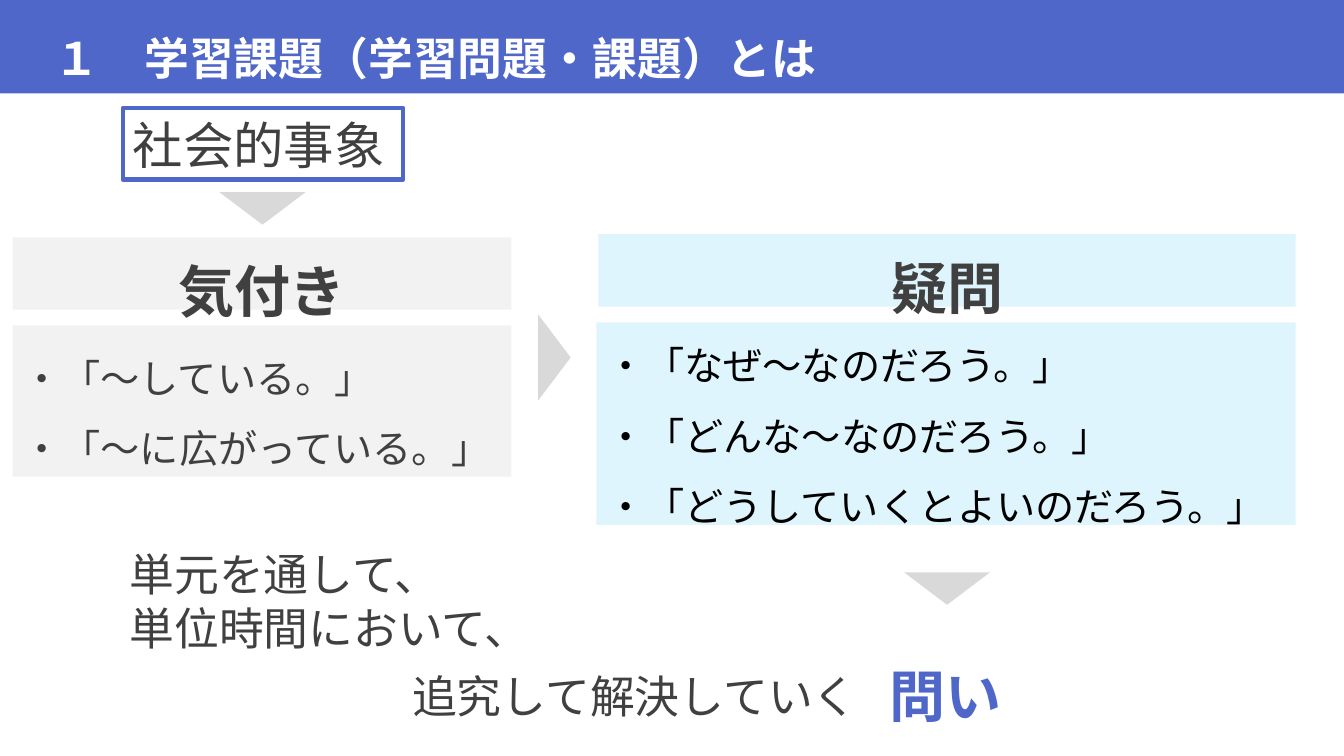
from dataclasses import dataclass

from lxml.etree import SubElement
from pptx import Presentation
from pptx.dml.color import RGBColor
from pptx.enum.shapes import MSO_SHAPE as Shape
from pptx.enum.text import MSO_ANCHOR as Anchor, MSO_AUTO_SIZE as AutoSize, PP_ALIGN as Align
from pptx.oxml.ns import qn
from pptx.util import Pt


@dataclass(frozen=True)
class Theme:
    font: str = "Noto Sans CJK JP"
    blue: str = "4E67C8"
    white: str = "FFFFFF"
    black: str = "000000"
    ink: str = "404040"
    arrow: str = "D9D9D9"
    grey: str = "F2F2F2"
    sky: str = "DFF5FD"
    list_size: int = 28
    text_size: int = 32
    topic_size: int = 36
    heading_size: int = 40


PX = 9525
theme = Theme()


def add_block(box, fill=None, kind=Shape.RECTANGLE):
    place = [value * PX for value in box]
    if fill is None:
        return slide.shapes.add_textbox(*place)
    shape = slide.shapes.add_shape(kind, *place)
    shape.shadow.inherit = False
    shape.fill.solid()
    shape.fill.fore_color.rgb = RGBColor.from_string(fill)
    shape.line.fill.background()
    return shape


def write(shape, lines, size, color, bold=False, align=Align.LEFT, spacing=1.0, **frame_format):
    frame = shape.text_frame
    frame_values = {"word_wrap": True, "auto_size": AutoSize.NONE,
                    "vertical_anchor": Anchor.MIDDLE, **frame_format}
    for name, value in frame_values.items():
        setattr(frame, name, value)
    frame.text = "\n".join(lines)
    for paragraph in frame.paragraphs:
        paragraph.alignment = align
        paragraph.line_spacing = spacing
        font = paragraph.runs[0].font
        for name, value in {"name": theme.font, "size": Pt(size), "bold": bold}.items():
            setattr(font, name, value)
        font.color.rgb = RGBColor.from_string(color)
        properties = paragraph.runs[0]._r.get_or_add_rPr()
        SubElement(properties, qn("a:ea"), typeface=theme.font)


presentation = Presentation()
presentation.slide_width = 1280 * PX
presentation.slide_height = 720 * PX
slide = presentation.slides.add_slide(presentation.slide_layouts[5])

title = slide.shapes.title
for name, value in {"left": 0, "top": -5, "width": 1280, "height": 94}.items():
    setattr(title, name, value * PX)
title.fill.solid()
title.fill.fore_color.rgb = RGBColor.from_string(theme.blue)
write(title, ["１　学習課題（学習問題・課題）とは"], theme.text_size, theme.white,
      bold=True, spacing=1.5, margin_left=52 * PX)

topic = add_block((117, 103, 267, 68), theme.white)
topic.line.color.rgb = RGBColor.from_string(theme.blue)
topic.line.width = Pt(3)
write(topic, ["社会的事象"], theme.topic_size, theme.ink, auto_size=AutoSize.SHAPE_TO_FIT_TEXT)

panels = [
    ("気付き", (12, 226, 475, 69), (12, 310, 475, 144), theme.grey, theme.ink, Anchor.TOP,
     ["・「～している。」", "・「～に広がっている。」"]),
    ("疑問", (570, 223, 664, 69), (568, 307, 666, 193), theme.sky, theme.black, Anchor.MIDDLE,
     ["・「なぜ～なのだろう。」", "・「どんな～なのだろう。」", "・「どうしていくとよいのだろう。」"]),
]
for heading, heading_box, list_box, fill, color, anchor, examples in panels:
    write(add_block(list_box, fill), examples, theme.list_size, color,
          spacing=1.5, vertical_anchor=anchor)
    write(add_block(heading_box, fill), [heading], theme.heading_size, theme.ink,
          bold=True, align=Align.CENTER, spacing=1.5)

for left, top, rotation in [(209, 183, 180), (487, 325, 90), (861, 545, 180)]:
    arrow = add_block((left, top, 82, 31), theme.arrow, Shape.ISOSCELES_TRIANGLE)
    arrow.rotation = rotation

write(add_block((114, 512, 398, 120)), ["単元を通して、", "単位時間において、"],
      theme.text_size, theme.ink)
write(add_block((383, 628, 455, 69)), ["追究して解決していく"], theme.text_size, theme.ink)
write(add_block((838, 625, 127, 74)), ["問い"], theme.heading_size, theme.blue, bold=True,
      word_wrap=False, auto_size=AutoSize.SHAPE_TO_FIT_TEXT, vertical_anchor=Anchor.TOP)

presentation.save("out.pptx")
